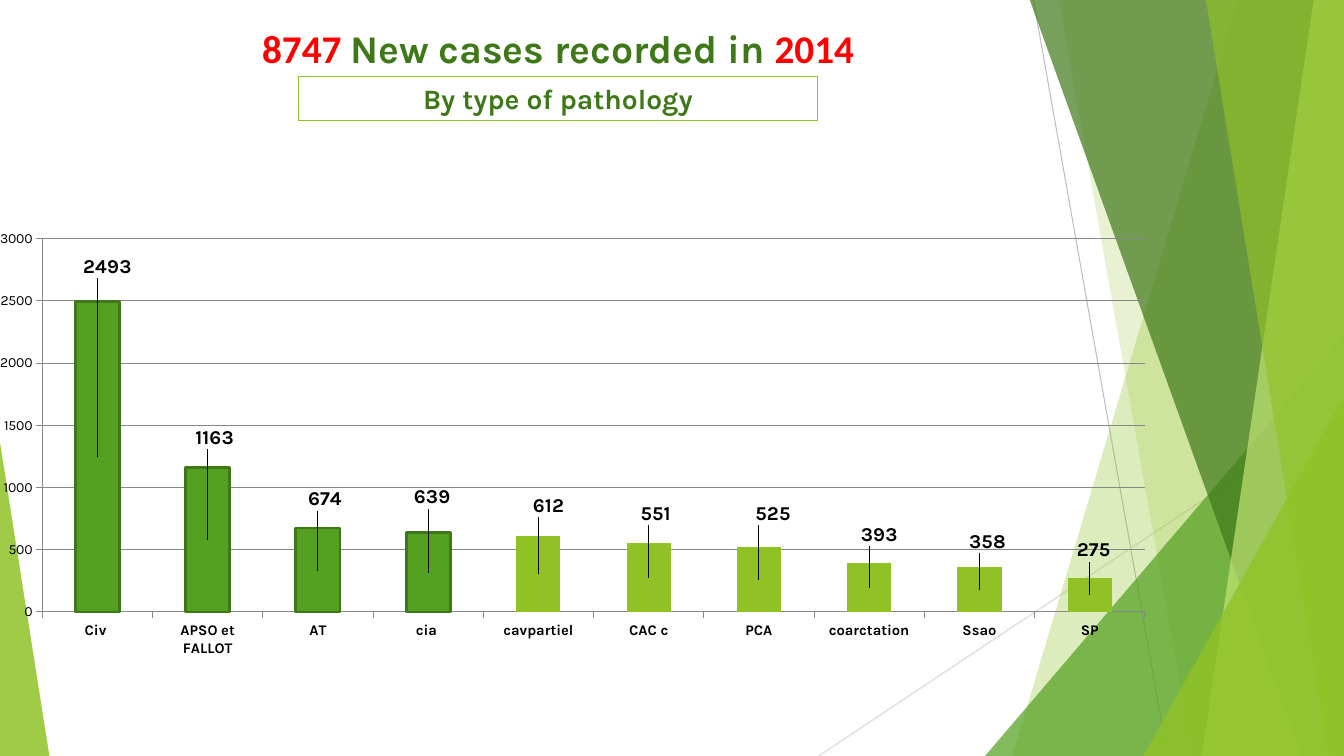
"""Build the slide of new cases recorded in 2014 by type of pathology."""
import pptx
import pptx.chart.data
import pptx.dml.color
import pptx.enum.chart
import pptx.enum.shapes
import pptx.enum.text
import pptx.oxml
import pptx.oxml.ns
import pptx.util
from lxml import etree

PX = 9144
W, H = 1333, 750
LIME, GREEN, DARK, PALE = "90C226", "54A021", "3F7819", "C0E474"
RED, BLACK, GREY = "FF0000", "000000", "878787"
CHART_BOX = (0, 154, 1147, 563)
CASES = [
    ("Civ ", 2493, 10, -188), ("APSO et FALLOT", 1163, 7, -101),
    ("AT", 674, 7, -70), ("cia ", 639, 4, -74), ("cavpartiel", 612, 10, -67),
    ("CAC c", 551, 7, -63), ("PCA", 525, 14, -65), ("coarctation", 393, 10, -52),
    ("Ssao", 358, 8, -47), ("SP", 275, 4, -44),
]
HIGHLIGHTED = 4


def px(*values):
    return [pptx.util.Emu(v * PX) for v in values]


def color(value):
    return pptx.dml.color.RGBColor.from_string(value)


def set_fill(sp, value, alpha):
    sp.shadow.inherit = False
    sp.line.fill.background()
    sp.fill.solid()
    sp.fill.fore_color.rgb = color(value)
    clr = sp.fill._xPr.find(".//" + pptx.oxml.ns.qn("a:srgbClr"))
    etree.SubElement(clr, pptx.oxml.ns.qn("a:alpha"), val=str(alpha * 1000))


def set_font(font, size, value=BLACK, name="Karla", bold=False):
    font.size = pptx.util.Pt(size)
    font.name = name
    font.bold = bold
    font.color.rgb = color(value)


def add_text(p, text, **fmt):
    p.alignment = pptx.enum.text.PP_ALIGN.CENTER
    r = p.add_run()
    r.text = text
    set_font(r.font, **fmt)


def add_hairline(s, x1, y1, x2, y2, value):
    line = s.shapes.add_connector(
        pptx.enum.shapes.MSO_CONNECTOR.STRAIGHT, *px(x1, y1, x2, y2))
    line.line.color.rgb = color(value)
    line.line.width = pptx.util.Pt(0.75)
    etree.SubElement(line._element.spPr, pptx.oxml.ns.qn("a:effectLst"))


def add_band(s, top_x, bottom_x, value, alpha):
    fb = s.shapes.build_freeform(top_x, -1, scale=PX)
    fb.add_line_segments([(W, -1), (W, H), (bottom_x, H)], close=True)
    set_fill(fb.convert_to_shape(), value, alpha)


def add_triangle(s, box, apex, value, alpha):
    sp = s.shapes.add_shape(
        pptx.enum.shapes.MSO_SHAPE.ISOSCELES_TRIANGLE, *px(*box))
    sp.adjustments[0] = apex
    set_fill(sp, value, alpha)


def add_decoration(s):
    add_hairline(s, 1025, 0, 1158, H, "BFBFBF")
    add_hairline(s, W, 403, 812, H, "D9D9D9")
    add_band(s, 1228, 1004, LIME, 30)
    add_band(s, 1050, 1183, LIME, 20)
    add_triangle(s, (977, 333, 356, 417), 1, GREEN, 72)
    add_band(s, 1021, 1291, DARK, 70)
    add_band(s, 1303, 1192, PALE, 70)
    add_band(s, 1196, 1318, LIME, 65)
    add_triangle(s, (1134, 393, 199, 357), 1, LIME, 80)
    add_triangle(s, (0, 439, 49, 311), 0, LIME, 85)


def add_title(s):
    title = s.shapes.title
    title.left, title.top, title.width, title.height = px(212, 19, 683, 57)
    p = title.text_frame.paragraphs[0]
    add_text(p, "8747 ", size=28, value=RED, name="Calibri", bold=True)
    add_text(p, "New cases recorded in ", size=28, value=DARK, bold=True)
    add_text(p, "2014", size=28, value=RED, name="Calibri", bold=True)


def add_subtitle(s):
    sp = s.shapes.add_shape(
        pptx.enum.shapes.MSO_SHAPE.RECTANGLE, *px(296, 76, 515, 44))
    sp.shadow.inherit = False
    sp.fill.background()
    sp.line.color.rgb = color(LIME)
    sp.line.width = pptx.util.Pt(0.75)
    add_text(sp.text_frame.paragraphs[0], "By type of pathology",
             size=20, value=DARK, bold=True)


def manual_layout(**settings):
    layout = pptx.oxml.parse_xml(
        "<c:layout %s><c:manualLayout/></c:layout>" % pptx.oxml.ns.nsdecls("c"))
    for tag, val in settings.items():
        etree.SubElement(layout[0], pptx.oxml.ns.qn("c:" + tag), val=str(val))
    return layout


def format_axis(axis, size, bold=False):
    set_font(axis.tick_labels.font, size, bold=bold)
    axis.major_tick_mark = pptx.enum.chart.XL_TICK_MARK.OUTSIDE
    axis.format.line.color.rgb = color(GREY)
    axis.format.line.width = pptx.util.Pt(0.75)


def format_points(ser):
    for i, (_, _, dx, dy) in enumerate(CASES):
        point = ser.points[i]
        if i < HIGHLIGHTED:
            point.format.fill.solid()
            point.format.fill.fore_color.rgb = color(GREEN)
            point.format.line.color.rgb = color(DARK)
            point.format.line.width = pptx.util.Pt(2)
        set_font(point.data_label.font, 14, bold=True)
        label = ser._element.xpath("c:dLbls/c:dLbl[c:idx/@val='%d']" % i)[0]
        label.insert(1, manual_layout(x=dx / CHART_BOX[2], y=dy / CHART_BOX[3]))


def add_cases_chart(s):
    data = pptx.chart.data.CategoryChartData()
    data.categories = [case[0] for case in CASES]
    data.add_series("Series 1", [case[1] for case in CASES])
    chart = s.shapes.add_chart(
        pptx.enum.chart.XL_CHART_TYPE.COLUMN_STACKED, *px(*CHART_BOX), data).chart
    chart.has_legend = False
    chart.has_title = False
    set_font(chart.font, 10)
    area = chart._chartSpace.chart.plotArea
    for old in area.xpath("c:layout"):
        area.remove(old)
    area.insert(0, manual_layout(layoutTarget="inner", xMode="edge", yMode="edge",
                                 x=0.036, y=0.147, w=0.954, h=0.658))
    format_axis(chart.category_axis, 10.5, bold=True)
    axis = chart.value_axis
    format_axis(axis, 10)
    axis.minimum_scale, axis.maximum_scale, axis.major_unit = 0, 3000, 500
    axis.has_major_gridlines = True
    axis.major_gridlines.format.line.color.rgb = color(GREY)
    axis.major_gridlines.format.line.width = pptx.util.Pt(0.75)
    plot = chart.plots[0]
    plot.gap_width, plot.overlap, plot.vary_by_categories = 150, 100, False
    ser = plot.series[0]
    ser.format.fill.solid()
    ser.format.fill.fore_color.rgb = color(LIME)
    ser.data_labels.show_value = True
    set_font(ser.data_labels.font, 14, bold=True)
    format_points(ser)


def main():
    prs = pptx.Presentation()
    prs.slide_width, prs.slide_height = px(W, H)
    s = prs.slides.add_slide(prs.slide_layouts[5])
    add_decoration(s)
    add_title(s)
    add_cases_chart(s)
    add_subtitle(s)
    prs.save("out.pptx")


if __name__ == "__main__":
    main()
